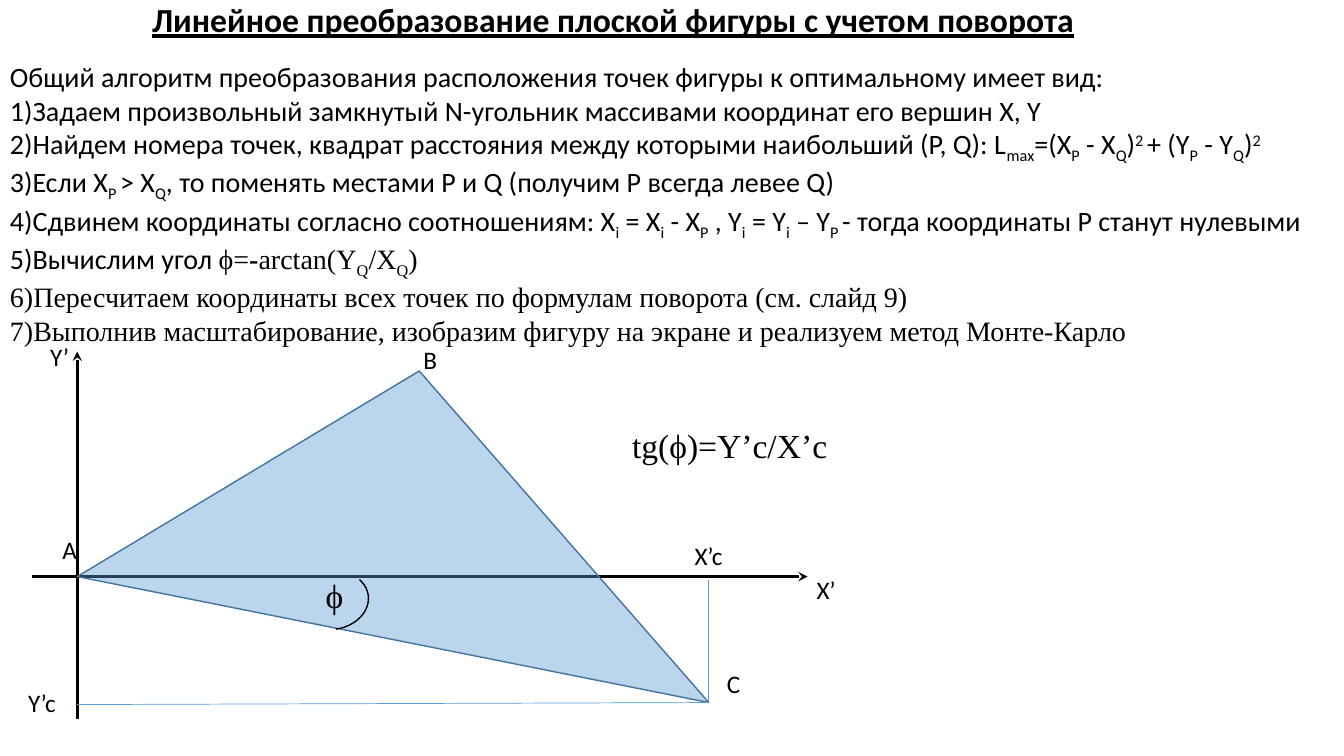
from dataclasses import dataclass

from lxml.etree import SubElement
from pptx import Presentation
from pptx.dml.color import RGBColor
from pptx.enum.shapes import MSO_CONNECTOR, MSO_SHAPE
from pptx.enum.text import MSO_AUTO_SIZE
from pptx.oxml.ns import qn
from pptx.util import Inches, Pt


@dataclass(frozen=True)
class Theme:
    sans: str = "Calibri"
    serif: str = "Times New Roman"
    black: RGBColor = RGBColor(0x00, 0x00, 0x00)
    blue: RGBColor = RGBColor(0x5B, 0x9B, 0xD5)
    outline: RGBColor = RGBColor(0x43, 0x73, 0x9E)
    fill_opacity: int = 41
    heading: int = 24
    body: int = 20
    label: int = 18
    axis_width: float = 2.25
    shape_width: float = 1
    guide_width: float = 0.5


THEME = Theme()
WIDTH, HEIGHT = Inches(13.33), Inches(7.5)

# Points are (column, row) on a grid of 100 columns by 100 rows.
A, B, C = (5.75, 76.27), (31.2, 49.07), (52.74, 92.93)

TITLE = "Линейное преобразование плоской фигуры с учетом поворота"

# Each paragraph: its font, then pieces split by "|".
# A piece starts with _ (subscript), ^ (superscript), * (bold) or ~ (serif).
ALGORITHM = [
    (THEME.sans, "Общий алгоритм преобразования расположения точек фигуры к оптимальному имеет вид:"),
    (THEME.sans, "1)Задаем произвольный замкнутый N-угольник массивами координат его вершин X, Y"),
    (THEME.sans, "2)Найдем номера точек, квадрат расстояния между которыми наибольший (P, Q): "
                 "L|_max|=(X|_P| - X|_Q|)|^2 |+ (Y|_P| - Y|_Q|)|^2"),
    (THEME.sans, "3)Если X|_P |> X|_Q|, то поменять местами P и Q (получим P всегда левее Q)"),
    (THEME.sans, "4)Сдвинем координаты согласно соотношениям: X|_i| = X|_i| - X|_P| , "
                 "Y|_i| = Y|_i| – Y|_P |- тогда координаты P станут нулевыми"),
    (THEME.serif, "~5)Вычислим угол |ϕ=|*-|arctan(Y|_Q|/X|_Q|)"),
    (THEME.serif, "6)Пересчитаем координаты всех точек по формулам поворота (см. слайд 9)"),
    (THEME.serif, "7)Выполнив масштабирование, изобразим фигуру на экране и реализуем метод Монте-Карло"),
]
ALGORITHM[5] = (THEME.serif, ALGORITHM[5][1])

BASELINES = {"_": "-25000", "^": "30000"}

# Text, column, row, columns wide
POINT_LABELS = [
    ("A", 3.9, 70, 2.6),
    ("B", 30.76, 44.93, 2.6),
    ("C", 53.34, 87.73, 2.6),
    ("X’c", 50.94, 70.8, 3.6),
    ("Y’c", 1.35, 90.27, 3.6),
    ("X’", 60.02, 75.33, 2.93),
    ("Y’", 3, 44.53, 2.93),
]


def place(column, row):
    """Turn grid columns and rows into slide lengths."""
    return round(WIDTH * column / 100), round(HEIGHT * row / 100)


def style_line(shape, color, width):
    shape.line.color.rgb = color
    shape.line.width = Pt(width)


def add_line(slide, start, end, color, width, arrow=False):
    line = slide.shapes.add_connector(MSO_CONNECTOR.STRAIGHT, *place(*start), *place(*end))
    style_line(line, color, width)
    SubElement(line._element.spPr, qn("a:effectLst"))
    if arrow:
        SubElement(line.line._get_or_add_ln(), qn("a:tailEnd"), type="stealth")


def add_triangle(slide):
    builder = slide.shapes.build_freeform(*place(*A))
    builder.add_line_segments([place(*B), place(*C)], close=True)
    triangle = builder.convert_to_shape()
    triangle.shadow.inherit = False
    triangle.fill.solid()
    triangle.fill.fore_color.rgb = THEME.blue
    color = triangle._element.spPr.find(qn("a:solidFill"))[0]
    SubElement(color, qn("a:alpha"), val=str(THEME.fill_opacity * 1000))
    style_line(triangle, THEME.outline, THEME.shape_width)


def add_angle_arc(slide):
    arc = slide.shapes.add_shape(MSO_SHAPE.ARC, *place(22.51, 74.53), *place(4.35, 9.73))
    arc.shadow.inherit = False
    arc.fill.background()
    arc.rotation = 82
    arc.adjustments[0], arc.adjustments[1] = 144.86, 0
    style_line(arc, THEME.black, THEME.shape_width)


def add_text_frame(slide, column, row, columns, rows, wrap=False):
    frame = slide.shapes.add_textbox(*place(column, row), *place(columns, rows)).text_frame
    frame.word_wrap = wrap
    frame.auto_size = MSO_AUTO_SIZE.SHAPE_TO_FIT_TEXT
    return frame


def style_font(paragraph, name, size):
    paragraph.font.name = name
    paragraph.font.size = Pt(size)
    paragraph.font.color.rgb = THEME.black


def add_label(slide, text, column, row, columns, rows, name, size):
    paragraph = add_text_frame(slide, column, row, columns, rows).paragraphs[0]
    paragraph.text = text
    style_font(paragraph, name, size)
    return paragraph


def add_piece(paragraph, piece):
    """Add one marked piece of a formula as a run."""
    mark = piece[0] if piece[0] in "_^*~" else ""
    run = paragraph.add_run()
    run.text = piece[len(mark):]
    if mark in BASELINES:
        run._r.get_or_add_rPr().set("baseline", BASELINES[mark])
    elif mark == "*":
        run.font.bold = True
    elif mark == "~":
        run.font.name = THEME.sans


def add_algorithm(slide):
    frame = add_text_frame(slide, 0, 7.2, 99.47, 41.33, wrap=True)
    for index, (name, text) in enumerate(ALGORITHM):
        paragraph = frame.add_paragraph() if index else frame.paragraphs[0]
        style_font(paragraph, name, THEME.body)
        for piece in text.split("|"):
            add_piece(paragraph, piece)


def add_diagram(slide):
    origin_column, origin_row = A
    add_line(slide, (origin_column, 95.07), (origin_column, 46.53), THEME.black, THEME.axis_width, arrow=True)
    add_line(slide, (2.4, origin_row), (60.09, origin_row), THEME.black, THEME.axis_width, arrow=True)
    add_triangle(slide)
    add_angle_arc(slide)
    for foot in [(C[0], 76.67), (origin_column, 93.2)]:
        add_line(slide, C, foot, THEME.blue, THEME.guide_width)
    for text, column, row, columns in POINT_LABELS:
        add_label(slide, text, column, row, columns, 5.33, THEME.sans, THEME.label)
    add_label(slide, "ϕ", 23.48, 75.33, 3.08, 6.67, THEME.serif, THEME.heading)
    add_label(slide, "tg(ϕ)=Y’c/X’c", 46.29, 55.6, 16.58, 6.67, THEME.serif, THEME.heading)


def main():
    presentation = Presentation()
    presentation.slide_width, presentation.slide_height = WIDTH, HEIGHT
    slide = presentation.slides.add_slide(presentation.slide_layouts[6])
    add_diagram(slide)
    add_algorithm(slide)
    title = add_label(slide, TITLE, 10.58, -0.8, 70.82, 6.67, THEME.sans, THEME.heading)
    title.font.bold = True
    title.font.underline = True
    presentation.save("out.pptx")


if __name__ == "__main__":
    main()
